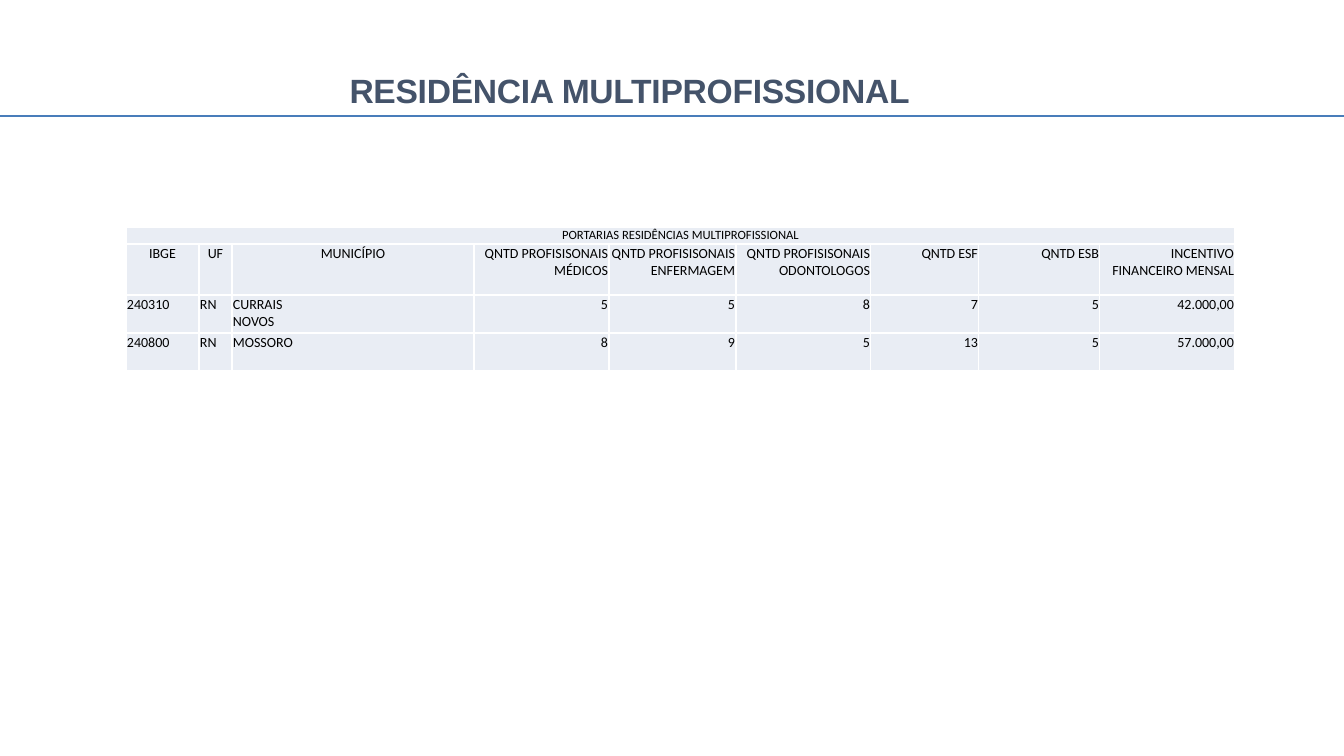
"""Build the slide on multiprofessional residency ordinances."""
from lxml.etree import SubElement
from pptx import Presentation
from pptx.dml.color import RGBColor
from pptx.enum.shapes import MSO_CONNECTOR
from pptx.enum.text import MSO_ANCHOR, MSO_AUTO_SIZE, PP_ALIGN
from pptx.oxml.ns import qn
from pptx.util import Emu, Pt

SLIDE_WIDTH, SLIDE_HEIGHT = 1344, 756
EMU_PER_PX = 12192000 / SLIDE_WIDTH

WHITE = RGBColor(0xFF, 0xFF, 0xFF)
BLACK = RGBColor(0x00, 0x00, 0x00)
SLATE = RGBColor(0x44, 0x53, 0x6A)
RULE_BLUE = RGBColor(0x49, 0x7D, 0xBA)
CELL_FILL = RGBColor(0xE9, 0xED, 0xF4)

TITLE = "RESIDÊNCIA MULTIPROFISSIONAL"
CAPTION = "PORTARIAS RESIDÊNCIAS MULTIPROFISSIONAL"
HEADINGS = [
    "IBGE", "UF", "MUNICÍPIO",
    "QNTD PROFISISONAIS MÉDICOS", "QNTD PROFISISONAIS ENFERMAGEM",
    "QNTD PROFISISONAIS ODONTOLOGOS", "QNTD ESF", "QNTD ESB",
    "INCENTIVO FINANCEIRO MENSAL",
]
MUNICIPALITIES = [
    ["240310", "RN", "CURRAIS\nNOVOS", "5", "5", "8", "7", "5", "42.000,00"],
    ["240800", "RN", "MOSSORO", "8", "9", "5", "13", "5", "57.000,00"],
]
COLUMN_WIDTHS = [73, 33, 242, 135, 127, 135, 108, 121, 135]
ROW_HEIGHTS = [17, 51, 38, 38]
TEXT_COLUMNS = 3


def px(length):
    return Emu(round(length * EMU_PER_PX))


def set_font(paragraph, name, size, color, bold=False):
    font = paragraph.font
    font.name, font.size, font.bold = name, Pt(size), bold
    font.color.rgb = color


def add_title(slide):
    title = slide.shapes.title
    title.left, title.top, title.width, title.height = px(43), px(39), px(914), px(73)
    frame = title.text_frame
    frame.margin_left = frame.margin_right = frame.margin_bottom = 0
    frame.margin_top = px(31)
    frame.vertical_anchor = MSO_ANCHOR.TOP
    frame.word_wrap = True
    frame.auto_size = MSO_AUTO_SIZE.SHAPE_TO_FIT_TEXT
    paragraph = frame.paragraphs[0]
    paragraph.text = TITLE
    paragraph.alignment = PP_ALIGN.CENTER
    properties = paragraph._p.get_or_add_pPr()
    properties.set("marL", str(px(259)))
    properties.set("indent", "0")
    set_font(paragraph, "Arial", 24, SLATE, bold=True)
    properties.find(qn("a:defRPr")).set("spc", "-20")


def add_rule(slide, top):
    rule = slide.shapes.add_connector(
        MSO_CONNECTOR.STRAIGHT, 0, px(top), px(SLIDE_WIDTH), px(top))
    rule.line.color.rgb = RULE_BLUE
    rule.line.width = Pt(0.75)
    SubElement(rule._element.spPr, qn("a:effectLst"))


def add_borders(cell):
    properties = cell._tc.get_or_add_tcPr()
    for side in ("lnL", "lnR", "lnT", "lnB"):
        line = SubElement(properties, qn(f"a:{side}"), w=str(Pt(1)))
        fill = SubElement(line, qn("a:solidFill"))
        SubElement(fill, qn("a:srgbClr"), val=str(WHITE))


def fill_cell(cell, text, alignment, size=10):
    cell.margin_left = cell.margin_right = cell.margin_top = px(1)
    cell.margin_bottom = 0
    add_borders(cell)
    cell.fill.solid()
    cell.fill.fore_color.rgb = CELL_FILL
    paragraph = cell.text_frame.paragraphs[0]
    paragraph.text = text
    paragraph.alignment = alignment
    set_font(paragraph, "Calibri", size, BLACK)


def add_residency_table(slide):
    table = slide.shapes.add_table(
        len(ROW_HEIGHTS), len(COLUMN_WIDTHS), px(126), px(227),
        px(sum(COLUMN_WIDTHS)), px(sum(ROW_HEIGHTS))).table
    table.first_row = table.horz_banding = False
    for column, width in zip(table.columns, COLUMN_WIDTHS):
        column.width = px(width)
    for row, height in zip(table.rows, ROW_HEIGHTS):
        row.height = px(height)

    table.cell(0, 0).merge(table.cell(0, len(COLUMN_WIDTHS) - 1))
    fill_cell(table.cell(0, 0), CAPTION, PP_ALIGN.CENTER, size=9)
    for row_index, values in enumerate([HEADINGS, *MUNICIPALITIES], start=1):
        text_alignment = PP_ALIGN.CENTER if row_index == 1 else PP_ALIGN.LEFT
        for column_index, value in enumerate(values):
            is_text = column_index < TEXT_COLUMNS
            fill_cell(table.cell(row_index, column_index), value,
                      text_alignment if is_text else PP_ALIGN.RIGHT)


def main():
    presentation = Presentation()
    presentation.slide_width = px(SLIDE_WIDTH)
    presentation.slide_height = px(SLIDE_HEIGHT)
    slide = presentation.slides.add_slide(presentation.slide_layouts[5])
    add_rule(slide, 116)
    add_residency_table(slide)
    add_title(slide)
    presentation.save("out.pptx")


if __name__ == "__main__":
    main()
